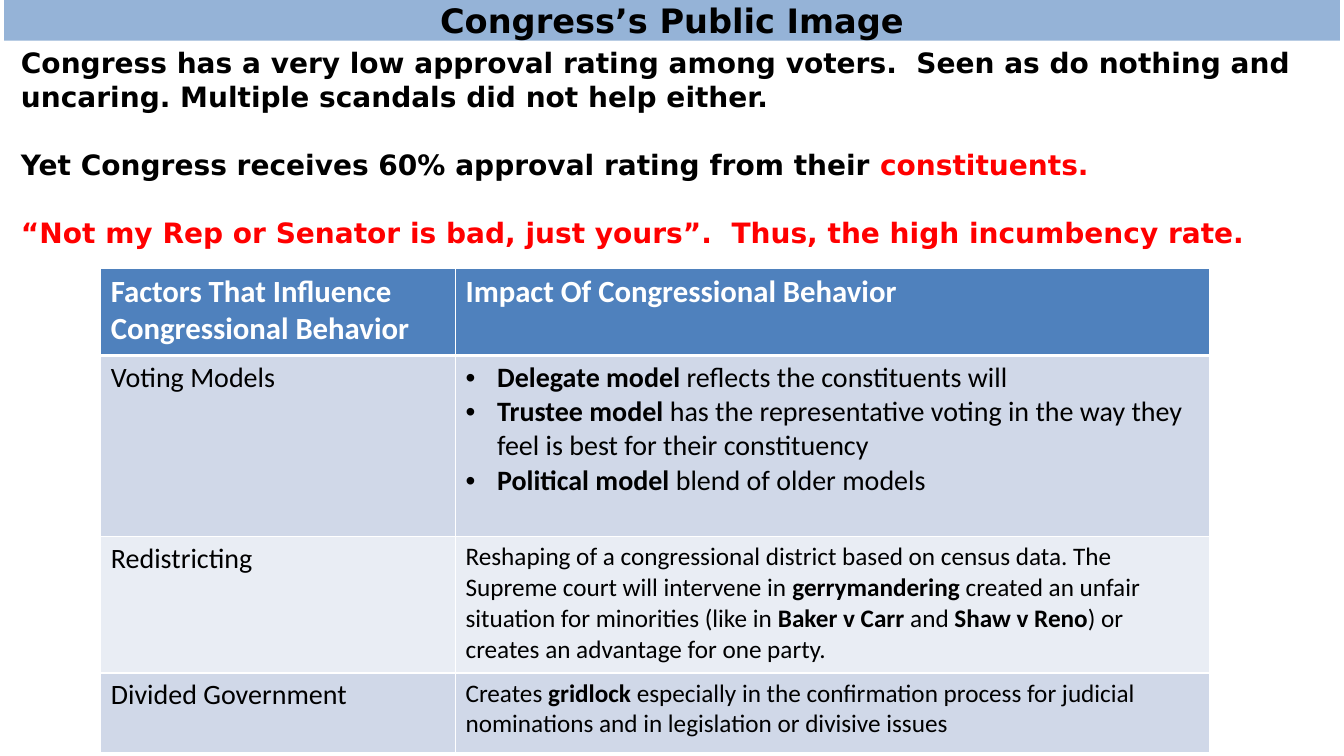
from lxml import etree
from pptx import Presentation
from pptx.dml.color import RGBColor
from pptx.enum.text import MSO_ANCHOR, MSO_AUTO_SIZE, PP_ALIGN
from pptx.oxml.ns import qn
from pptx.util import Pt

CENTER, MIDDLE, TOP = PP_ALIGN.CENTER, MSO_ANCHOR.MIDDLE, MSO_ANCHOR.TOP
NO_FIT = MSO_AUTO_SIZE.NONE

# Content: a paragraph is a list of (text, marked) runs
TITLE = "Congress’s Public Image"
INTRO = [
    [("Congress has a very low approval rating among voters.  Seen as do nothing "
      "and uncaring. Multiple scandals did not help either.", False)],
    [("Yet Congress receives 60% approval rating from their ", False),
     ("constituents.", True)],
    [("“Not my Rep or Senator is bad, just yours”.  Thus, the high incumbency rate.",
      True)],
]
HEADS = ["Factors That Influence Congressional Behavior",
         "Impact Of Congressional Behavior"]
FACTORS = [
    ("Voting Models", 20, True, [
        [("Delegate model ", True), ("reflects the constituents will", False)],
        [("Trustee model ", True),
         ("has the representative voting in the way they feel is best for their "
          "constituency", False)],
        [("Political model ", True), ("blend of older models", False)]]),
    ("Redistricting", 18, False, [
        [("Reshaping of a congressional district based on census data. The Supreme "
          "court will intervene in ", False), ("gerrymandering", True),
         (" created an unfair situation for minorities (like in ", False),
         ("Baker v Carr ", True), ("and ", False), ("Shaw v Reno", True),
         (") or creates an advantage for one party.", False)]]),
    ("Divided Government", 18, False, [
        [("Creates ", False), ("gridlock", True),
         (" especially in the confirmation process for judicial nominations and in "
          "legislation or divisive issues", False)]]),
]

# Format
COLORS = {"bar": "95B3D7", "ink": "000000", "mark": "FF0000", "white": "FFFFFF",
          "head": "4F81BD", "odd": "D0D8E8", "even": "E9EDF4"}
FRAME = {"margin_left": 0, "margin_right": 0, "margin_top": 0, "margin_bottom": 0,
         "word_wrap": True, "auto_size": NO_FIT}
WIDTHS = [253.4, 538.6]
HEIGHTS = [62.4, 129.6, 97.2, 57]
LINE = 24.2
INDENT = 22.5


def rgb(name):
    return RGBColor.from_string(COLORS[name])


def apply(item, values):
    for key, value in values.items():
        setattr(item, key, value)


def add_run(para, text, size, color="ink", bold=False, face="Calibri"):
    run = para.add_run()
    run.text = text
    apply(run.font, {"size": Pt(size), "bold": bold, "name": face})
    run.font.color.rgb = rgb(color)


def next_para(frame, index):
    return frame.add_paragraph() if index else frame.paragraphs[0]


def add_bullet(para):
    props = para._p.get_or_add_pPr()
    props.set("marL", str(Pt(INDENT)))
    props.set("indent", str(-Pt(INDENT)))
    etree.SubElement(props, qn("a:buFont")).set("typeface", "Arial")
    etree.SubElement(props, qn("a:buChar")).set("char", "•")


def add_edges(cell, row):
    props = cell._tc.get_or_add_tcPr()
    sizes = {"L": 1, "R": 1, "T": 3 if row == 1 else 1, "B": 3 if row == 0 else 1}
    for side, size in sizes.items():
        edge = etree.SubElement(props, qn("a:ln" + side))
        edge.set("w", str(Pt(size)))
        fill = etree.SubElement(edge, qn("a:solidFill"))
        etree.SubElement(fill, qn("a:srgbClr")).set("val", COLORS["white"])


def main():
    deck = Presentation()
    apply(deck, {"slide_width": Pt(960), "slide_height": Pt(540)})
    slide = deck.slides.add_slide(deck.slide_layouts[5])

    # Title bar
    title = slide.shapes.title
    apply(title, {"left": Pt(3), "top": Pt(0), "width": Pt(954), "height": Pt(29)})
    title.fill.solid()
    title.fill.fore_color.rgb = rgb("bar")
    apply(title.text_frame, {**FRAME, "vertical_anchor": MIDDLE})
    para = title.text_frame.paragraphs[0]
    para.alignment = CENTER
    add_run(para, TITLE, 24, bold=True, face="DejaVu Sans")

    # Introduction
    box = slide.shapes.add_textbox(Pt(15), Pt(32.4), Pt(930), Pt(145.4))
    apply(box.text_frame, {**FRAME, "vertical_anchor": TOP})
    for i, runs in enumerate(INTRO):
        para = next_para(box.text_frame, i)
        apply(para, {"line_spacing": Pt(LINE), "space_before": Pt(LINE if i else 0)})
        for text, marked in runs:
            add_run(para, text, 20, "mark" if marked else "ink", True, "DejaVu Sans")

    # Table grid
    table = slide.shapes.add_table(len(HEIGHTS), len(WIDTHS), Pt(72), Pt(191.5),
                                   Pt(sum(WIDTHS)), Pt(sum(HEIGHTS))).table
    for column, width in zip(table.columns, WIDTHS):
        column.width = Pt(width)
    for r, height in enumerate(HEIGHTS):
        table.rows[r].height = Pt(height)
        tint = "head" if r == 0 else "odd" if r % 2 else "even"
        for cell in table.rows[r].cells:
            add_edges(cell, r)
            cell.fill.solid()
            cell.fill.fore_color.rgb = rgb(tint)

    # Table text
    for c, head in enumerate(HEADS):
        add_run(table.cell(0, c).text_frame.paragraphs[0], head, 22, "white", True)
    for r, (factor, size, listed, impact) in enumerate(FACTORS, 1):
        add_run(table.cell(r, 0).text_frame.paragraphs[0], factor, 20)
        for i, runs in enumerate(impact):
            para = next_para(table.cell(r, 1).text_frame, i)
            if listed:
                add_bullet(para)
            for text, marked in runs:
                add_run(para, text, size, bold=marked)

    deck.save("out.pptx")


if __name__ == "__main__":
    main()
